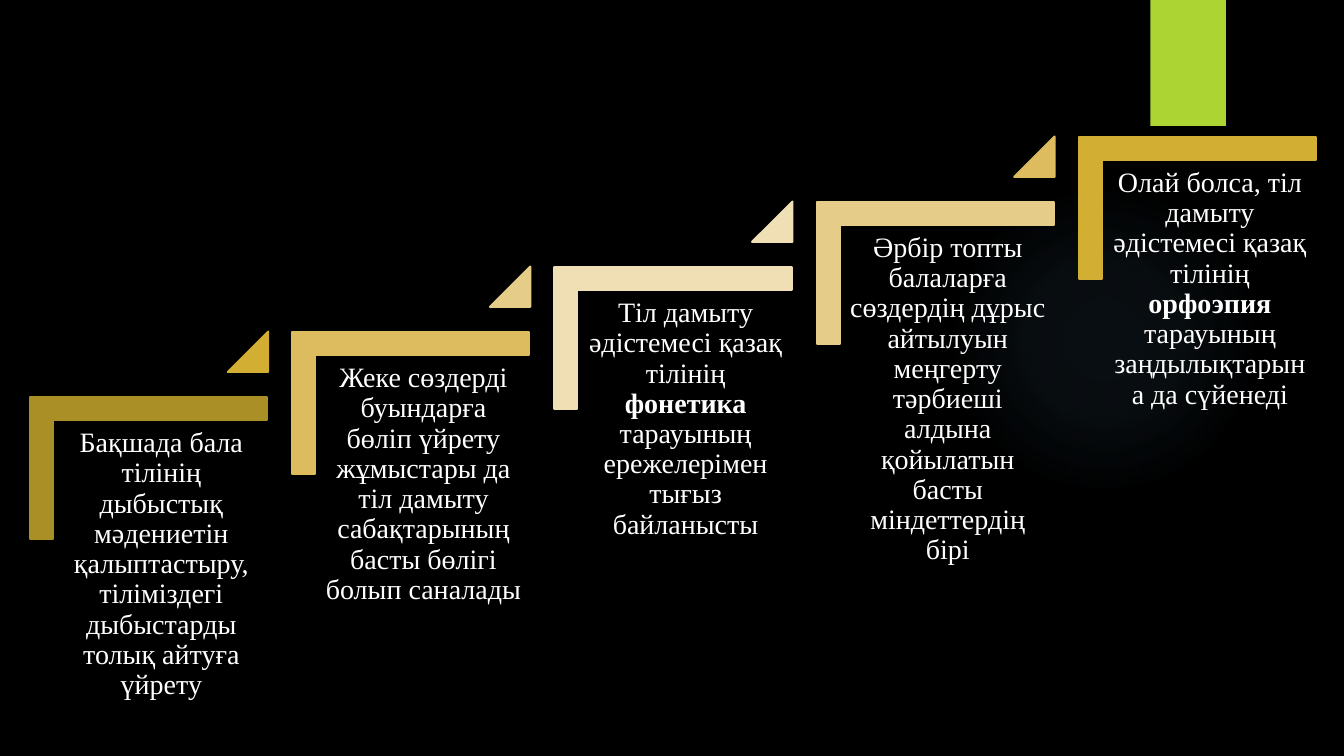
from lxml import etree
from pptx import Presentation
from pptx.dml.color import RGBColor
from pptx.enum.shapes import MSO_SHAPE
from pptx.enum.text import MSO_ANCHOR, PP_ALIGN
from pptx.oxml.ns import qn
from pptx.util import Inches, Pt

CORNER, TRIANGLE = MSO_SHAPE.CORNER, MSO_SHAPE.ISOSCELES_TRIANGLE
RECT, OVAL = MSO_SHAPE.RECTANGLE, MSO_SHAPE.OVAL
TOP, CENTER = MSO_ANCHOR.TOP, PP_ALIGN.CENTER

RUN = 2.6
RISE = 2.58 / 4

STEPS = [
    ("AA8F26", "D2AE33", [("Бақшада бала тілінің дыбыстық мәдениетін қалыптастыру, "
                           "тіліміздегі дыбыстарды толық айтуға үйрету", False)]),
    ("DCBC5E", "E6CC89", [("Жеке сөздерді буындарға бөліп үйрету жұмыстары да "
                           "тіл дамыту сабақтарының басты бөлігі болып саналады", False)]),
    ("F0DEB5", "F0DEB5", [("Тіл дамыту әдістемесі қазақ тілінің ", False),
                          ("фонетика ", True),
                          ("тарауының ережелерімен тығыз байланысты", False)]),
    ("E6CC89", "DCBC5E", [("Әрбір топты балаларға сөздердің дұрыс айтылуын меңгерту "
                           "тәрбиеші алдына қойылатын басты міндеттердің бірі", False)]),
    ("D2AE33", None, [("Олай болса, тіл дамыту әдістемесі қазақ тілінің ", False),
                      ("орфоэпия ", True),
                      ("тарауының заңдылықтарына да сүйенеді", False)]),
]


def rgb(value):
    return RGBColor.from_string(value)


def add_run(p, text, font="Times New Roman", size=20, color="FFFFFF", bold=False):
    r = p.add_run()
    r.text = text
    r.font.name = font
    r.font.size = Pt(size)
    r.font.bold = bold
    r.font.color.rgb = rgb(color)


class Deck:
    def __init__(self, background):
        self.prs = Presentation()
        self.prs.slide_width = Inches(13.33)
        self.prs.slide_height = Inches(7.5)
        self.s = self.prs.slides.add_slide(self.prs.slide_layouts[6])
        fill = self.s.background.fill
        fill.solid()
        fill.fore_color.rgb = rgb(background)

    def shape(self, kind, x, y, w, h, color, line=0, adj=(), rotation=0):
        sp = self.s.shapes.add_shape(kind, Inches(x), Inches(y), Inches(w), Inches(h))
        sp.shadow.inherit = False
        sp.rotation = rotation
        sp.fill.solid()
        sp.fill.fore_color.rgb = rgb(color)
        if line:
            sp.line.color.rgb = rgb(color)
            sp.line.width = Pt(line)
        else:
            sp.line.fill.background()
        for i, value in enumerate(adj):
            sp.adjustments[i] = value
        return sp

    def glow(self, x, y, size, color, stops):
        sp = self.shape(OVAL, x, y, size, size, color)
        solid = sp.element.spPr.find(qn("a:solidFill"))
        grad = etree.Element(qn("a:gradFill"), rotWithShape="1")
        stop_list = etree.SubElement(grad, qn("a:gsLst"))
        for position, alpha in stops:
            gs = etree.SubElement(stop_list, qn("a:gs"), pos=str(position * 1000))
            clr = etree.SubElement(gs, qn("a:srgbClr"), val=color)
            etree.SubElement(clr, qn("a:alpha"), val=str(alpha * 1000))
        radial = etree.SubElement(grad, qn("a:path"), path="circle")
        etree.SubElement(radial, qn("a:fillToRect"), l="50000", t="50000", r="50000", b="50000")
        solid.getparent().replace(solid, grad)

    def text(self, x, y, w, h, runs):
        sp = self.s.shapes.add_textbox(Inches(x), Inches(y), Inches(w), Inches(h))
        tf = sp.text_frame
        tf.word_wrap = True
        tf.vertical_anchor = TOP
        tf.margin_left = tf.margin_right = tf.margin_top = tf.margin_bottom = Inches(0.08)
        p = tf.paragraphs[0]
        p.alignment = CENTER
        p.line_spacing = 0.9
        for text, bold in runs:
            add_run(p, text, bold=bold)

    def step(self, x, y, color, marker, runs):
        self.shape(CORNER, x + 0.47, y - 0.47, 1.41, 2.35, color, 1.5, (0.161, 0.161), 90)
        self.text(x + 0.24, y + 0.23, 2.12, 1.86, runs)
        if marker:
            self.shape(TRIANGLE, x + 1.96, y - 0.65, 0.4, 0.4, marker, 1.5, (1,))


def main():
    deck = Deck("000000")
    deck.glow(9.41, 1.83, 3.08, "7AC4F0", [(0, 7), (36, 6), (69, 0)])
    deck.shape(RECT, 11.41, 0, 0.75, 1.25, "ACD433")
    for i, (color, marker, runs) in enumerate(STEPS):
        deck.step(0.3 + i * RUN, 3.94 - i * RISE, color, marker, runs)
    deck.prs.save("out.pptx")


if __name__ == "__main__":
    main()
